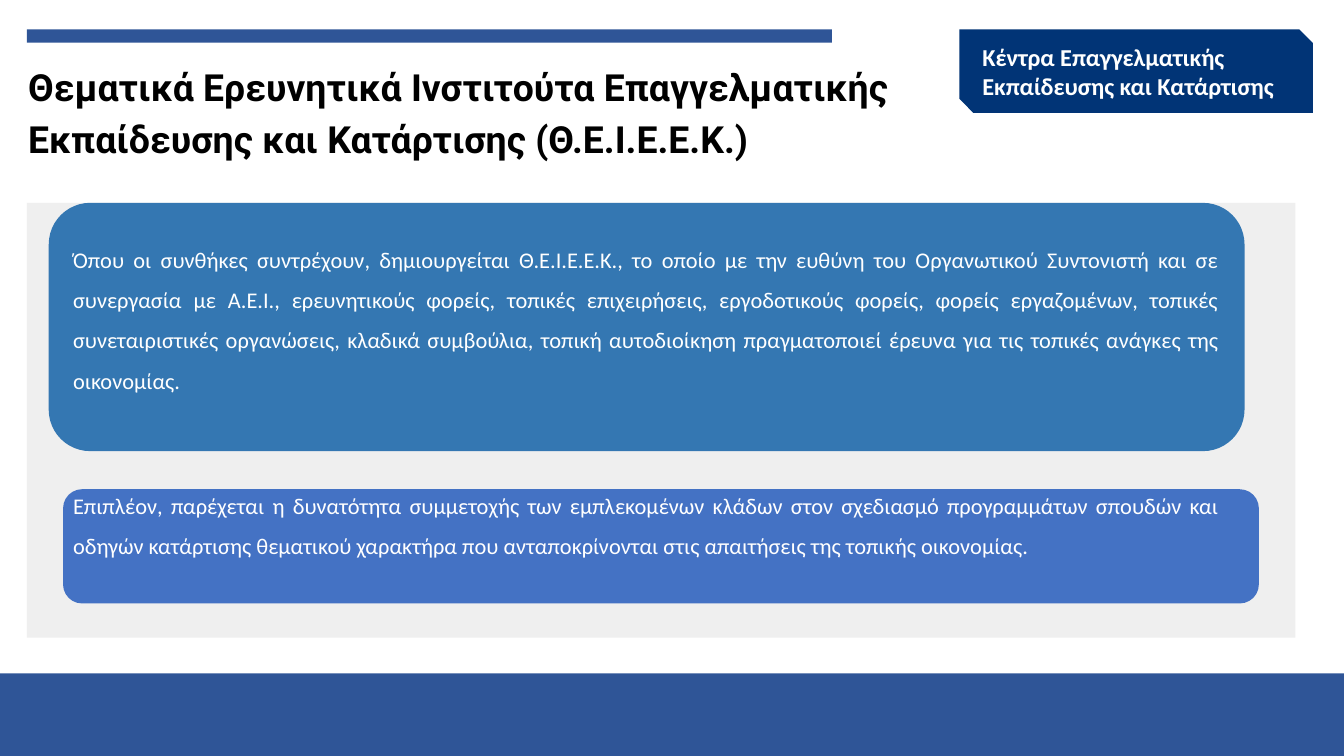
from dataclasses import dataclass
from pptx import Presentation
from pptx.dml.color import RGBColor as RGB
from pptx.enum.shapes import MSO_SHAPE as Form
from pptx.enum.text import MSO_ANCHOR as Anchor, MSO_AUTO_SIZE as Fit, PP_ALIGN as Align
from pptx.util import Pt


@dataclass(frozen=True)
class Theme:
    bar: str = "2F5597"
    panel: str = "EFEFEF"
    tag: str = "013476"
    upper: str = "3477B2"
    lower: str = "4472C4"
    dark: str = "000000"
    light: str = "FFFFFF"
    head: str = "Roboto"
    body: str = "Calibri"
    head_size: int = 20
    tag_size: int = 13
    body_size: int = 12


THEME = Theme()

TITLE = ("Θεματικά Ερευνητικά Ινστιτούτα Επαγγελματικής Εκπαίδευσης "
         "και Κατάρτισης (Θ.Ε.Ι.Ε.Ε.Κ.)")
TAG = "Κέντρα Επαγγελματικής Εκπαίδευσης και Κατάρτισης"
BODY = (
    "Όπου οι συνθήκες συντρέχουν, δημιουργείται Θ.Ε.Ι.Ε.Ε.Κ., το οποίο με την "
    "ευθύνη του Οργανωτικού Συντονιστή και σε συνεργασία με Α.Ε.Ι., ερευνητικούς "
    "φορείς, τοπικές επιχειρήσεις, εργοδοτικούς φορείς, φορείς εργαζομένων, τοπικές "
    "συνεταιριστικές οργανώσεις, κλαδικά συμβούλια, τοπική αυτοδιοίκηση "
    "πραγματοποιεί έρευνα για τις τοπικές ανάγκες της οικονομίας.",
    "Επιπλέον, παρέχεται η δυνατότητα συμμετοχής των εμπλεκομένων κλάδων στον "
    "σχεδιασμό προγραμμάτων σπουδών και οδηγών κατάρτισης θεματικού χαρακτήρα που "
    "ανταποκρίνονται στις απαιτήσεις της τοπικής οικονομίας.",
)


def add_form(slide, form, box, fill, *turns):
    shape = slide.shapes.add_shape(form, *map(Pt, box))
    shape.shadow.inherit = False
    shape.fill.solid()
    shape.fill.fore_color.rgb = RGB.from_string(fill)
    shape.line.fill.background()
    for i, turn in enumerate(turns):
        shape.adjustments[i] = turn
    return shape


def set_frame(frame, side, edge, anchor):
    frame.word_wrap = True
    frame.auto_size = Fit.NONE
    frame.vertical_anchor = anchor
    frame.margin_left = frame.margin_right = Pt(side)
    frame.margin_top = frame.margin_bottom = Pt(edge)


def style(para, face, size, color, bold=False, align=Align.LEFT, pitch=1.0):
    para.alignment = align
    para.line_spacing = pitch
    para.space_before = Pt(0)
    for run in para.runs:
        run.font.name = face
        run.font.size = Pt(size)
        run.font.bold = bold
        run.font.color.rgb = RGB.from_string(color)


# Header: rule, title and corner tag
def add_header(slide, box):
    left, top, width, _ = box
    add_form(slide, Form.RECTANGLE, (left, top, 431.3, 7.2), THEME.bar)

    title = slide.shapes.title
    title.left, title.top = Pt(left - 4.3), Pt(top + 12.2)
    title.width, title.height = Pt(508.3), Pt(55.4)
    frame = title.text_frame
    frame.text = TITLE
    set_frame(frame, 5, 3, Anchor.TOP)
    style(frame.paragraphs[0], THEME.head, THEME.head_size, THEME.dark,
          bold=True, pitch=1.15)

    wide = 189.4
    tag = add_form(slide, Form.SNIP_2_DIAG_RECTANGLE,
                   (left + width - wide, top, wide, 44.8), THEME.tag, 0, 0.167)
    frame = tag.text_frame
    frame.text = TAG
    set_frame(frame, 8.6, 1.4, Anchor.MIDDLE)
    style(frame.paragraphs[0], THEME.body, THEME.tag_size, THEME.light, bold=True)


# Content: grey panel, two cards and the text running across them
def add_content(slide, box):
    left, top, _, _ = box
    add_form(slide, Form.RECTANGLE, box, THEME.panel)
    for dx, dy, high, fill in ((11.7, 0, 133, THEME.upper),
                               (19.4, 153.4, 61.2, THEME.lower)):
        add_form(slide, Form.ROUNDED_RECTANGLE,
                 (left + dx, top + dy, 640.6, high), fill, 0.167)

    text = slide.shapes.add_textbox(Pt(left + 17.7), Pt(top + 8.6), Pt(628.5), Pt(216))
    frame = text.text_frame
    frame.text = "\n".join(BODY)
    set_frame(frame, 7.2, 7.2, Anchor.TOP)
    for para in frame.paragraphs:
        style(para, THEME.body, THEME.body_size, THEME.light,
              align=Align.JUSTIFY, pitch=1.5)
    frame.paragraphs[1].space_before = Pt(45.6)


# Footer band
def add_footer(slide, box):
    add_form(slide, Form.RECTANGLE, box, THEME.bar)


def main():
    deck = Presentation()
    deck.slide_width, deck.slide_height = Pt(720), Pt(405)
    slide = deck.slides.add_slide(deck.slide_layouts[5])
    add_footer(slide, (0, 360.8, 720, 44.2))
    add_header(slide, (14.4, 15.7, 689, 68))
    add_content(slide, (14.4, 108.7, 679.6, 233))
    deck.save("out.pptx")


if __name__ == "__main__":
    main()
